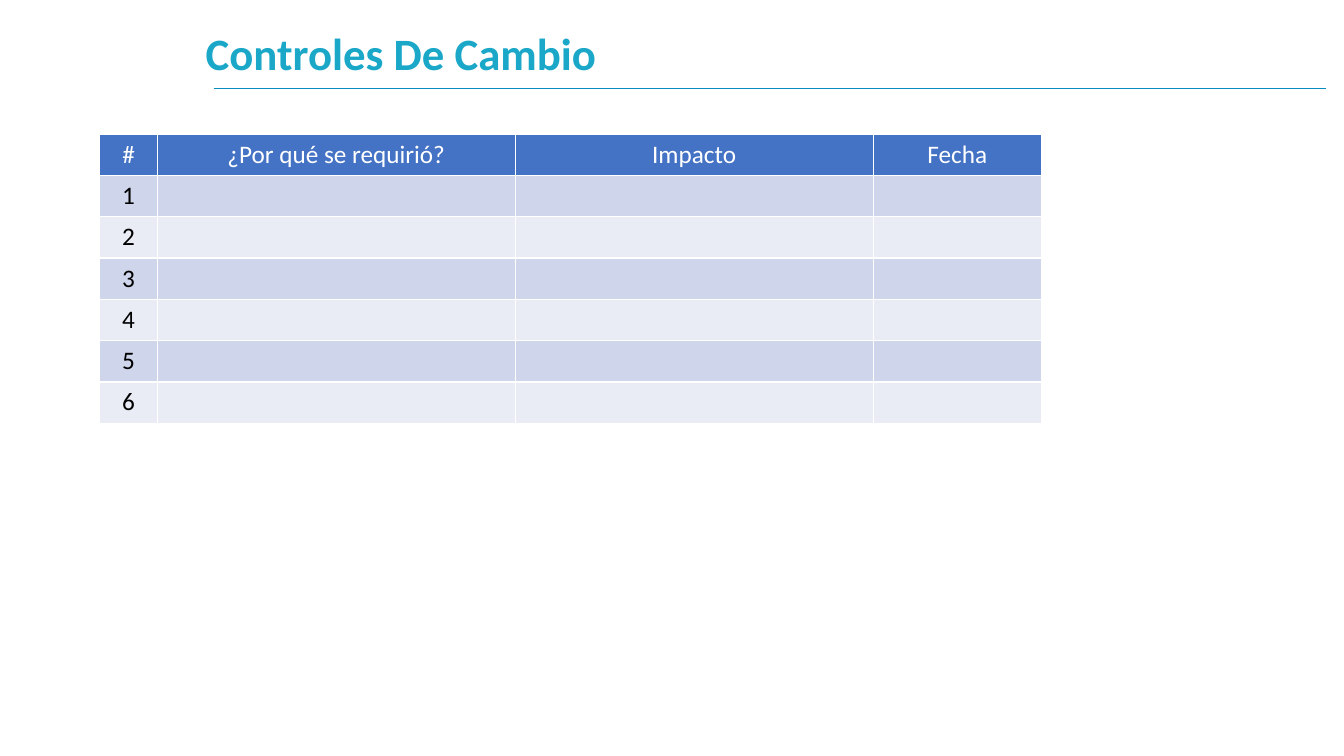
from lxml import etree
from pptx import Presentation
from pptx import util as u
from pptx.dml.color import RGBColor
from pptx.enum import shapes, text
from pptx.oxml.ns import qn

FONT = "Calibri"
COLORS = {
    "title": "1AA7C8",
    "rule": "098CBF",
    "header": "4472C4",
    "odd_row": "CFD5EA",
    "even_row": "E9EBF5",
    "white": "FFFFFF",
    "black": "000000",
}
HEADERS = ["#", "¿Por qué se requirió?", "Impacto", "Fecha"]
COLUMN_WIDTHS = [0.57, 3.55, 3.55, 1.67]
CHANGE_COUNT = 6
ROW_HEIGHT = 0.41


def color(name):
    return RGBColor.from_string(COLORS[name])


def format_paragraph(paragraph, size, color_name, alignment, bold=False):
    paragraph.alignment = alignment
    for run in paragraph.runs:
        run.font.name = FONT
        run.font.size = u.Pt(size)
        run.font.bold = bold
        run.font.color.rgb = color(color_name)


def add_title(slide, title):
    shape = slide.shapes.title
    shape.left, shape.top = u.Inches(1.94), u.Inches(0.27)
    shape.width, shape.height = u.Inches(11.01), u.Inches(0.57)
    text_frame = shape.text_frame
    text_frame.text = title
    text_frame.word_wrap = True
    text_frame.auto_size = text.MSO_AUTO_SIZE.NONE
    text_frame.vertical_anchor = text.MSO_ANCHOR.MIDDLE
    paragraph = text_frame.paragraphs[0]
    paragraph.line_spacing = 0.9
    format_paragraph(paragraph, 32, "title", text.PP_ALIGN.LEFT, bold=True)


def add_rule(slide, left, right, top):
    rule = slide.shapes.add_connector(
        shapes.MSO_CONNECTOR.STRAIGHT,
        u.Inches(left), u.Inches(top), u.Inches(right), u.Inches(top))
    rule.line.color.rgb = color("rule")
    rule.line.width = u.Pt(0.5)
    etree.SubElement(rule._element.spPr, qn("a:effectLst"))


def fill_cell(cell, label, fill_name, color_name):
    cell.fill.solid()
    cell.fill.fore_color.rgb = color(fill_name)
    cell.text_frame.text = label
    format_paragraph(cell.text_frame.paragraphs[0], 18, color_name, text.PP_ALIGN.CENTER)


def add_change_table(slide, left, top):
    row_count = CHANGE_COUNT + 1
    table = slide.shapes.add_table(
        row_count, len(HEADERS), u.Inches(left), u.Inches(top),
        u.Inches(sum(COLUMN_WIDTHS)), u.Inches(row_count * ROW_HEIGHT)).table
    for column, width in zip(table.columns, COLUMN_WIDTHS):
        column.width = u.Inches(width)
    for row in table.rows:
        row.height = u.Inches(ROW_HEIGHT)

    # Header row
    for index, header in enumerate(HEADERS):
        fill_cell(table.cell(0, index), header, "header", "white")

    # Numbered rows, left empty for the entries
    for number in range(1, row_count):
        fill_name = "odd_row" if number % 2 else "even_row"
        for index in range(len(HEADERS)):
            label = str(number) if index == 0 else ""
            fill_cell(table.cell(number, index), label, fill_name, "black")


def main():
    presentation = Presentation()
    presentation.slide_width = u.Inches(13.33)
    presentation.slide_height = u.Inches(7.5)
    title_only = presentation.slide_layouts.get_by_name("Title Only")
    slide = presentation.slides.add_slide(title_only)

    # Heading
    add_rule(slide, 2.12, 13.15, 0.88)
    add_title(slide, "Controles De Cambio")

    # Change log
    add_change_table(slide, 0.99, 1.33)

    presentation.save("out.pptx")


if __name__ == "__main__":
    main()
